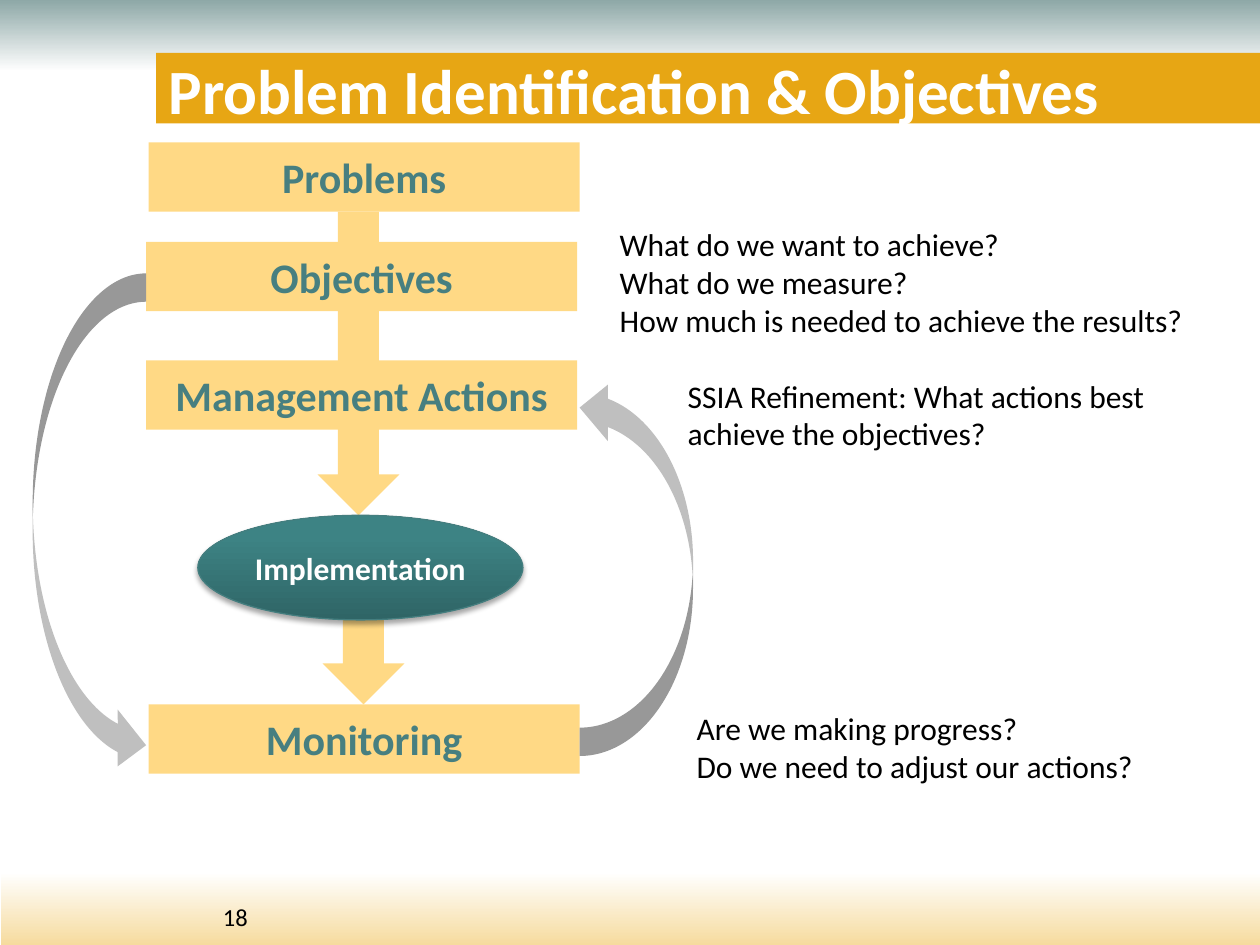
from lxml.etree import SubElement
from pptx import Presentation
from pptx.dml.color import RGBColor
from pptx.enum.shapes import MSO_SHAPE
from pptx.enum.text import MSO_ANCHOR, MSO_AUTO_SIZE, PP_ALIGN
from pptx.oxml.ns import qn
from pptx.util import Inches, Pt

WHITE = RGBColor(0xFF, 0xFF, 0xFF)
BLACK = RGBColor(0, 0, 0)
GOLD = RGBColor(0xE7, 0xA6, 0x14)
SAND = RGBColor(0xFF, 0xD9, 0x85)
PALE_GOLD = RGBColor(0xF6, 0xDB, 0x9E)
PALE_TEAL = RGBColor(0x8E, 0xA8, 0xA7)
TEAL_TEXT = RGBColor(0x47, 0x7F, 0x80)
TEAL_LINE = RGBColor(0x44, 0x7E, 0x7F)
TEAL_DARK = RGBColor(0x2F, 0x65, 0x66)
TEAL = RGBColor(0x3D, 0x83, 0x84)
GRAY = RGBColor(0xBF, 0xBF, 0xBF)

TITLE = "Problem Identification & Objectives"
PAGE_NUMBER = "18"
STEP_SIZE = (3.42, 0.55)
STEPS = [  # label, left, top
    ("Problems", 1.18, 1.13),
    ("Objectives", 1.16, 1.92),
    ("Management Actions", 1.16, 2.86),
    ("Monitoring", 1.18, 5.59),
]
DOWN_ARROWS = [(2.56, 4.51, 0.65, 1.08), (2.52, 1.68, 0.65, 2.41)]
LOOP_ARROWS = [  # place, rotation
    ((4.6, 3.01, 0.9, 2.99), 180),
    ((0.26, 2.17, 0.9, 3.97), 0),
]
NOTES = [  # place, wraps, lines
    ((4.82, 1.74, 4.73, 1.01), False, [
        "What do we want to achieve?",
        "What do we measure?",
        "How much is needed to achieve the results?",
    ]),
    ((5.36, 2.94, 4.05, 0.71), True, [
        "SSIA Refinement: What actions best achieve the objectives?",
    ]),
    ((5.43, 5.58, 3.71, 0.71), False, [
        "Are we making progress?",
        "Do we need to adjust our actions?",
    ]),
]


def add_figure(page, kind, place, color=None):
    figure = page.shapes.add_shape(kind, *map(Inches, place))
    figure.shadow.inherit = False
    figure.line.fill.background()
    if color is not None:
        figure.fill.solid()
        figure.fill.fore_color.rgb = color
    return figure


def fill_gradient(figure, stops, angle):
    """Blend two (position, colour) stops; the angle runs counter-clockwise."""
    figure.fill.gradient()
    figure.fill.gradient_angle = angle
    for stop, (position, color) in zip(figure.fill.gradient_stops, stops):
        stop.position = position
        stop.color.rgb = color


def write(frame, lines, size, color, bold=False, align=PP_ALIGN.LEFT):
    for index, line in enumerate(lines):
        para = frame.add_paragraph() if index else frame.paragraphs[0]
        para.alignment = align
        span = para.add_run()
        span.text = line
        span.font.name = "Calibri"
        span.font.size = Pt(size)
        span.font.bold = bold
        span.font.color.rgb = color


def add_label(figure, label, size, color):
    frame = figure.text_frame
    frame.word_wrap = True
    frame.vertical_anchor = MSO_ANCHOR.MIDDLE
    frame.margin_left = frame.margin_right = Inches(0.05)
    frame.margin_top = frame.margin_bottom = Inches(0.05)
    write(frame, [label], size, color, True, PP_ALIGN.CENTER)


def add_text(page, place, lines, size, wrap=True):
    box = page.shapes.add_textbox(*map(Inches, place))
    box.text_frame.word_wrap = wrap
    box.text_frame.auto_size = MSO_AUTO_SIZE.SHAPE_TO_FIT_TEXT
    write(box.text_frame, lines, size, BLACK)


def add_soft_shadow(figure):
    effects = figure._element.spPr.find(qn("a:effectLst"))
    shadow = SubElement(effects, qn("a:outerShdw"), blurRad=str(Pt(3.1)),
                        dist=str(Pt(1.8)), dir="5400000", rotWithShape="0")
    color = SubElement(shadow, qn("a:srgbClr"), val="000000")
    SubElement(color, qn("a:alpha"), val="35000")


def main():
    deck = Presentation()
    deck.slide_width, deck.slide_height = Inches(10), Inches(7.5)
    page = deck.slides.add_slide(deck.slide_layouts[6])

    top_band = add_figure(page, MSO_SHAPE.RECTANGLE, (-0.01, 0, 10.03, 1.09))
    fill_gradient(top_band, [(0, PALE_TEAL), (0.52, WHITE)], 270)
    add_figure(page, MSO_SHAPE.RECTANGLE, (1.24, 0.42, 8.76, 0.56), GOLD)
    bottom_band = add_figure(page, MSO_SHAPE.RECTANGLE, (0.01, 6.39, 9.99, 1.11))
    fill_gradient(bottom_band, [(0, PALE_GOLD), (0.52, WHITE)], 90)
    add_text(page, (1.67, 7.11, 0.85, 0.34), [PAGE_NUMBER], 14)

    title = page.shapes.add_textbox(*map(Inches, (1.24, 0.42, 8.77, 0.58)))
    title.text_frame.word_wrap = True
    title.text_frame.vertical_anchor = MSO_ANCHOR.MIDDLE
    write(title.text_frame, [TITLE], 36, WHITE, True)

    for place in DOWN_ARROWS:
        add_figure(page, MSO_SHAPE.DOWN_ARROW, place, SAND)
    for label, left, top in STEPS:
        step = add_figure(page, MSO_SHAPE.RECTANGLE, (left, top, *STEP_SIZE), SAND)
        add_label(step, label, 24, TEAL_TEXT)

    implementation = add_figure(page, MSO_SHAPE.OVAL, (1.57, 4.09, 2.58, 0.83))
    fill_gradient(implementation, [(0, TEAL_DARK), (0.8, TEAL)], 90)
    implementation.line.color.rgb = TEAL_LINE
    implementation.line.width = Pt(0.75)
    add_soft_shadow(implementation)
    add_label(implementation, "Implementation", 18, WHITE)

    for place, rotation in LOOP_ARROWS:
        loop = add_figure(page, MSO_SHAPE.CURVED_RIGHT_ARROW, place, GRAY)
        loop.rotation = rotation
    for place, wrap, lines in NOTES:
        add_text(page, place, lines, 18, wrap)

    deck.save("out.pptx")


if __name__ == "__main__":
    main()
